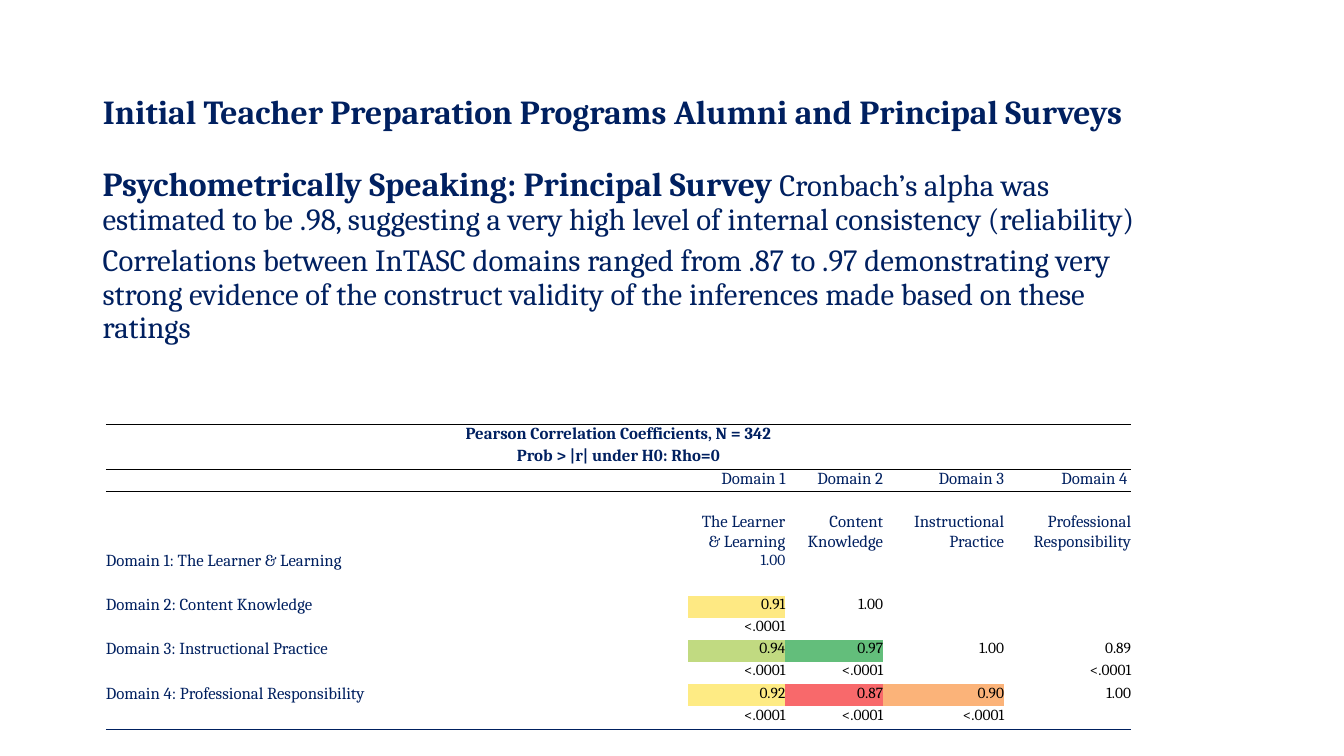
from lxml import etree
from pptx import Presentation
from pptx.dml.color import RGBColor
from pptx.enum import text
from pptx.oxml import ns
from pptx.util import Inches, Pt

FONT = "Cambria"
COLORS = {
    "navy": "002060", "black": "000000", "gold": "FEE983", "lime": "C1DA81",
    "green": "63BE7B", "yellow": "FEEB84", "red": "F8696B", "orange": "FBB379",
}
NO_STYLE = "{2D5ABB26-0587-4C30-8999-92F81FD0307C}"
LEFT, CENTER, RIGHT = text.PP_ALIGN.LEFT, text.PP_ALIGN.CENTER, text.PP_ALIGN.RIGHT

COL_WIDTHS = [5.77, 0.97, 0.97, 1.2, 1.26]
ROW_HEIGHTS = [0.22, 0.23, 0.22, 0.59] + [0.22] * 7 + [0.23]
CAPTIONS = ["Pearson Correlation Coefficients, N = 342", "Prob > |r| under H0: Rho=0"]
HEADERS = [
    ["", "Domain 1", "Domain 2", "Domain 3", "Domain 4 "],
    ["", "The Learner & Learning", "Content Knowledge", "Instructional Practice",
     "Professional Responsibility"],
]
P = "<.0001"
RESULTS = [
    ["Domain 1: The Learner & Learning", "1.00", "", "", ""],
    ["", "", "", "", ""],
    ["Domain 2: Content Knowledge", "0.91", "1.00", "", ""],
    ["", P, "", "", ""],
    ["Domain 3: Instructional Practice", "0.94", "0.97", "1.00", "0.89"],
    ["", P, P, "", P],
    ["Domain 4: Professional Responsibility", "0.92", "0.87", "0.90", "1.00"],
    ["", P, P, P, ""],
]
# (row, column) of the shaded correlations
HEAT = {(6, 1): "gold", (8, 1): "lime", (8, 2): "green",
        (10, 1): "yellow", (10, 2): "red", (10, 3): "orange"}
# row: (edge, colour)
RULES = {0: ("lnT", "black"), 1: ("lnB", "black"), 2: ("lnT", "black"), 11: ("lnB", "navy")}


def add_text(p, words, size=12, color="navy", bold=False, align=LEFT, spacing=None, before=None):
    p.alignment = align
    if spacing:
        p.line_spacing = spacing
    if before is not None:
        p.space_before = Pt(before)
    r = p.add_run()
    r.text = words
    r.font.name = FONT
    r.font.size = Pt(size)
    r.font.bold = bold
    r.font.color.rgb = RGBColor.from_string(COLORS[color])


def add_title(s, words):
    sp = s.shapes.title
    sp.left, sp.top, sp.width, sp.height = [Inches(v) for v in (0.92, 0.4, 11.5, 1.45)]
    tf = sp.text_frame
    tf.auto_size = text.MSO_AUTO_SIZE.NONE
    tf.vertical_anchor = text.MSO_ANCHOR.MIDDLE
    add_text(tf.paragraphs[0], words, size=24, bold=True, spacing=0.9)


def add_findings(s):
    sp = s.shapes.add_textbox(Inches(0.92), Inches(1.61), Inches(10.74), Inches(2.52))
    tf = sp.text_frame
    tf.word_wrap = True
    body = dict(size=22, spacing=0.9, before=6)
    p = tf.paragraphs[0]
    add_text(p, "Psychometrically Speaking: Principal Survey ", size=24, bold=True)
    add_text(p, "Cronbach’s alpha was estimated to be .98, suggesting a very high level "
                "of internal consistency (reliability)", **body)
    add_text(tf.add_paragraph(),
             "Correlations between InTASC domains ranged from .87 to .97 demonstrating very "
             "strong evidence of the construct validity of the inferences made based on "
             "these ratings", **body)


def add_rule(cell, edge, color):
    ln = etree.Element(ns.qn("a:" + edge), w=str(Pt(1)))
    fill = etree.SubElement(ln, ns.qn("a:solidFill"))
    etree.SubElement(fill, ns.qn("a:srgbClr"), val=COLORS[color])
    cell._tc.get_or_add_tcPr().insert(0, ln)


def format_cell(cell, words, fill=None, anchor=text.MSO_ANCHOR.TOP, **fmt):
    cell.margin_left = cell.margin_right = cell.margin_top = cell.margin_bottom = 0
    cell.vertical_anchor = anchor
    if fill:
        cell.fill.solid()
        cell.fill.fore_color.rgb = RGBColor.from_string(COLORS[fill])
    else:
        cell.fill.background()
    p = cell.text_frame.paragraphs[0]
    if words:
        add_text(p, words, **fmt)
    else:
        # Keeps an empty cell from stretching its row
        p._p.get_or_add_endParaRPr().set("sz", "1100")


def add_correlations(s):
    rows = [[c, "", "", "", ""] for c in CAPTIONS] + HEADERS + RESULTS
    frame = s.shapes.add_table(len(rows), len(COL_WIDTHS), Inches(1.05), Inches(4.21),
                               Inches(sum(COL_WIDTHS)), Inches(sum(ROW_HEIGHTS)))
    table = frame.table
    table.first_row = table.horz_banding = False
    table._tbl.tblPr.find(ns.qn("a:tableStyleId")).text = NO_STYLE
    for col, width in zip(table.columns, COL_WIDTHS):
        col.width = Inches(width)
    for row, height in zip(table.rows, ROW_HEIGHTS):
        row.height = Inches(height)

    for i, row in enumerate(rows):
        for j, words in enumerate(row):
            cell = table.cell(i, j)
            if i < 2:
                fmt = dict(bold=True, align=CENTER)
            elif j == 0:
                fmt = dict(align=LEFT)
            elif i < 4:
                fmt = dict(align=RIGHT)
            else:
                fmt = dict(size=11, color="navy" if i == 4 else "black", align=RIGHT)
            if i == 3:
                fmt["anchor"] = text.MSO_ANCHOR.BOTTOM
            format_cell(cell, words, fill=HEAT.get((i, j)), **fmt)
            if i in RULES:
                add_rule(cell, *RULES[i])
    for i in range(len(CAPTIONS)):
        table.cell(i, 0).merge(table.cell(i, len(COL_WIDTHS) - 1))


def main():
    prs = Presentation()
    prs.slide_width, prs.slide_height = Inches(13.33), Inches(7.5)
    s = prs.slides.add_slide(prs.slide_layouts[5])
    add_title(s, "Initial Teacher Preparation Programs Alumni and Principal Surveys")
    add_correlations(s)
    add_findings(s)
    prs.save("out.pptx")


if __name__ == "__main__":
    main()
